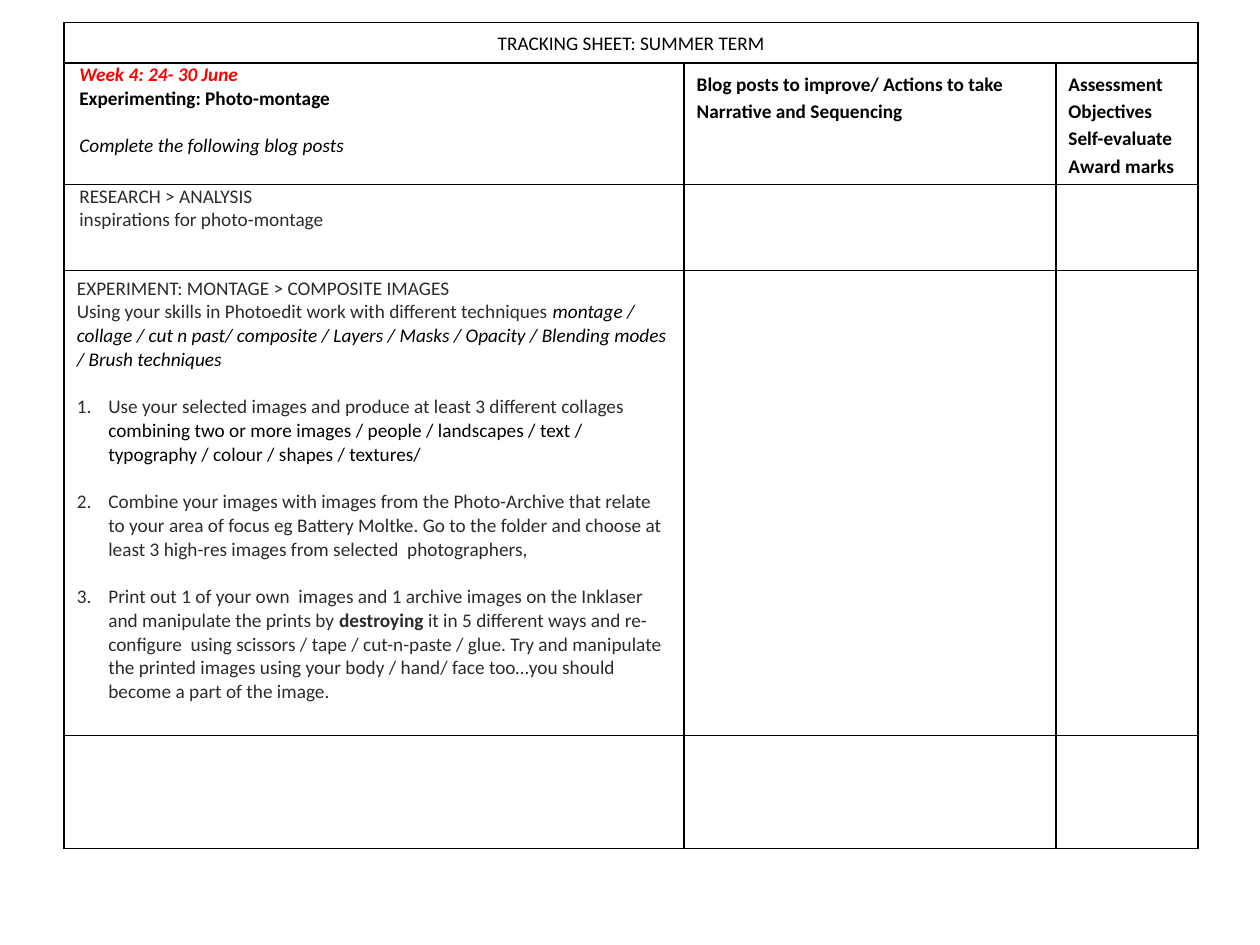
"""Build the weekly tracking sheet slide as one table."""
from lxml import etree
from pptx import Presentation
from pptx.dml.color import RGBColor
from pptx.enum.text import PP_ALIGN
from pptx.oxml.ns import qn
from pptx.util import Inches, Pt

CENTER = PP_ALIGN.CENTER
FONT, SIZE, GAP = "Calibri", 11, 13.5
BLACK, GREY, RED = "000000", "2B2B2B", "FF0000"

COLUMNS = [4.92, 2.95, 1.13]
ROWS = [0.32, 0.96, 0.68, 3.69, 0.9]
LEFT, TOP = 0.51, 0.18
PLAIN_INSETS, WEEK_INSETS = (0.1, 0.05), (0.12, 0)


def line(*spans, **layout):
    """Describe a paragraph; each span is text, colour and style letters."""
    return spans, layout


def headings(*texts):
    """Describe bold heading lines."""
    return [line((text, BLACK, "b"), spacing=1.15) for text in texts]


CELLS = {
    (0, 0): (PLAIN_INSETS, [
        line(("TRACKING SHEET: SUMMER TERM", BLACK, ""), spacing=1.15, align=CENTER),
    ]),
    (1, 0): (WEEK_INSETS, [
        line(("Week 4: 24- 30 June", RED, "bi")),
        line(("Experimenting: Photo-montage", BLACK, "b")),
        line(("Complete the following blog posts", BLACK, "i"), before=GAP),
    ]),
    (1, 1): (PLAIN_INSETS, headings(
        "Blog posts to improve/ Actions to take", "Narrative and Sequencing")),
    (1, 2): (PLAIN_INSETS, headings(
        "Assessment Objectives", "Self-evaluate", "Award marks")),
    (2, 0): (WEEK_INSETS, [
        line(("RESEARCH > ANALYSIS", GREY, "")),
        line(("inspirations for photo-montage", GREY, "")),
    ]),
    (3, 0): (PLAIN_INSETS, [
        line(("EXPERIMENT: MONTAGE > COMPOSITE IMAGES", GREY, "")),
        line(("Using your skills in Photoedit work with different techniques ", GREY, ""),
             ("montage / collage / cut n past/ composite / Layers / Masks / Opacity / "
              "Blending modes / Brush techniques", BLACK, "i")),
        line(("Use your selected images and produce at least 3 different collages ", GREY, ""),
             ("combining two or more images / people / landscapes / text / typography / "
              "colour / shapes / textures/", BLACK, ""), before=GAP, numbered=True),
        line(("Combine your images with images from the Photo-Archive that relate to your "
              "area of focus eg Battery Moltke. Go to the folder and choose at least 3 "
              "high-res images from selected  photographers,", GREY, ""),
             before=GAP, numbered=True),
        line(("Print out 1 of your own  images and 1 archive images on the Inklaser and "
              "manipulate the prints by ", GREY, ""),
             ("destroying", GREY, "b"),
             (" it in 5 different ways and re-configure  using scissors / tape / "
              "cut-n-paste / glue. Try and manipulate the printed images using your body / "
              "hand/ face too…you should become a part of the image.", GREY, ""),
             before=GAP, numbered=True),
    ]),
}


def colour(value):
    """Turn a hex string into a colour."""
    return RGBColor.from_string(value)


def style_cell(cell):
    """Give a cell thin black borders and no fill."""
    properties = cell._tc.get_or_add_tcPr()
    for side in "LRTB":
        border = etree.SubElement(properties, qn(f"a:ln{side}"), w=str(Pt(1)))
        fill = etree.SubElement(border, qn("a:solidFill"))
        etree.SubElement(fill, qn("a:srgbClr"), val=BLACK)
    cell.fill.background()


def number(para):
    """Number a paragraph with a hanging indent."""
    properties = para._p.get_or_add_pPr()
    properties.set("marL", str(Inches(0.25)))
    properties.set("indent", str(Inches(-0.25)))
    etree.SubElement(properties, qn("a:buFont"), typeface="+mj-lt")
    etree.SubElement(properties, qn("a:buAutoNum"), type="arabicPeriod")


def write_cell(cell, insets, lines):
    """Write the lines into a cell, run by run."""
    side, edge = insets
    cell.margin_left = cell.margin_right = Inches(side)
    cell.margin_top = cell.margin_bottom = Inches(edge)
    frame = cell.text_frame
    for index, (spans, layout) in enumerate(lines):
        para = frame.add_paragraph() if index else frame.paragraphs[0]
        para.alignment = layout.get("align")
        para.line_spacing = layout.get("spacing", 1.0)
        para.space_before = Pt(layout.get("before", 0))
        if layout.get("numbered"):
            number(para)
        for text, shade, style in spans:
            span = para.add_run()
            span.text = text
            span.font.name, span.font.size = FONT, Pt(SIZE)
            span.font.color.rgb = colour(shade)
            span.font.bold, span.font.italic = "b" in style, "i" in style


def main():
    """Build and save the deck."""
    deck = Presentation()
    deck.slide_width, deck.slide_height = Inches(10), Inches(7.5)
    page = deck.slides.add_slide(deck.slide_layouts[6])
    table = page.shapes.add_table(
        len(ROWS), len(COLUMNS), Inches(LEFT), Inches(TOP),
        Inches(sum(COLUMNS)), Inches(sum(ROWS))).table
    table.first_row = table.horz_banding = False
    for column, width in zip(table.columns, COLUMNS):
        column.width = Inches(width)
    for row, height in zip(table.rows, ROWS):
        row.height = Inches(height)
    for cell in table.iter_cells():
        style_cell(cell)
    table.cell(0, 0).merge(table.cell(0, len(COLUMNS) - 1))
    for position, (insets, lines) in CELLS.items():
        write_cell(table.cell(*position), insets, lines)
    deck.save("out.pptx")


if __name__ == "__main__":
    main()
